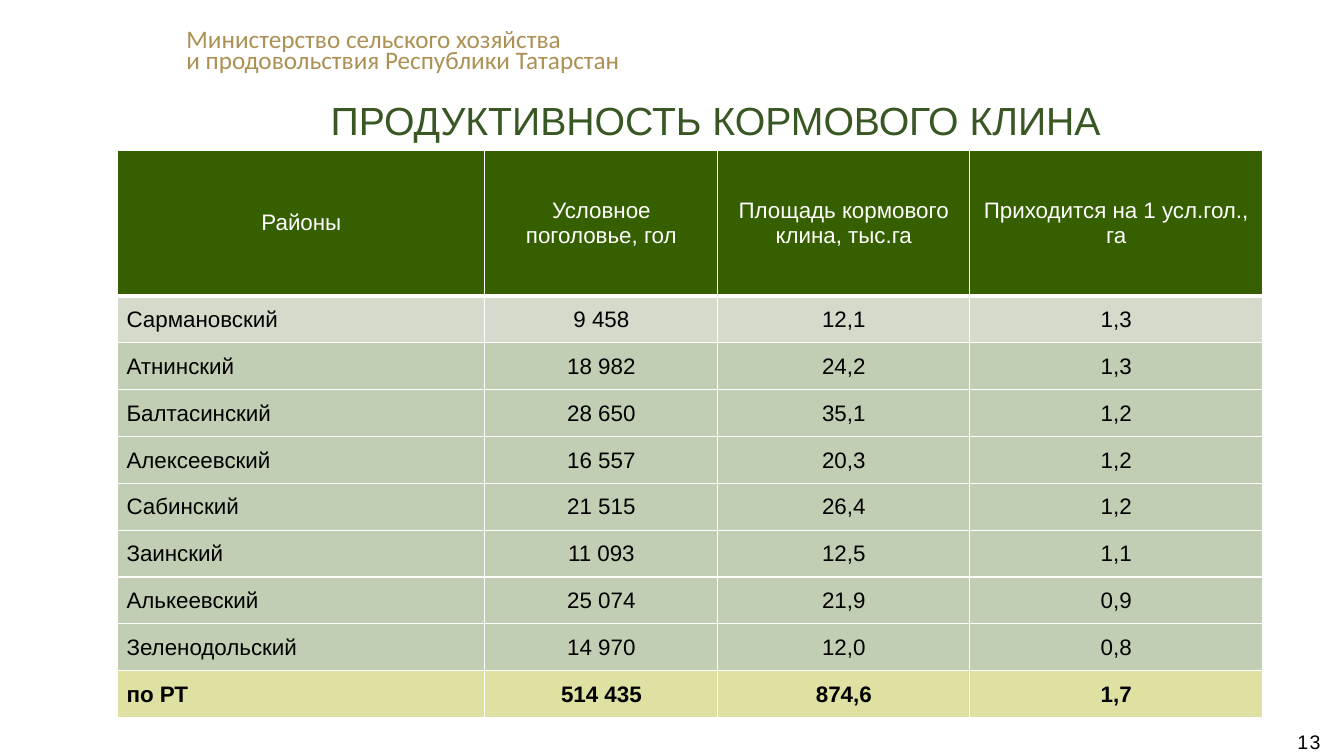
import pptx
import pptx.util
import pptx.dml.color
import pptx.enum.text
import pptx.oxml
import pptx.oxml.ns
from pptx.util import Cm

COLORS = {
    "white": "FFFFFF",
    "black": "000000",
    "gold": "AC9054",
    "title": "385723",
    "head": "366000",
    "pale": "D4DBCA",
    "green": "C2CEB3",
    "total": "DEE1A1",
}
ALIGN = pptx.enum.text.PP_ALIGN
ANCHOR = pptx.enum.text.MSO_ANCHOR

HEADS = ["Районы", "Условное поголовье, гол",
         "Площадь кормового клина, тыс.га", "Приходится на 1 усл.гол., га"]
ROWS = [
    ["Сармановский", "9 458", "12,1", "1,3"],
    ["Атнинский", "18 982", "24,2", "1,3"],
    ["Балтасинский", "28 650", "35,1", "1,2"],
    ["Алексеевский", "16 557", "20,3", "1,2"],
    ["Сабинский", "21 515", "26,4", "1,2"],
    ["Заинский", "11 093", "12,5", "1,1"],
    ["Алькеевский", "25 074", "21,9", "0,9"],
    ["Зеленодольский", "14 970", "12,0", "0,8"],
    ["по РТ", "514 435", "874,6", "1,7"],
]
WIDTHS = [9.25, 5.87, 6.35, 7.38]


def rgb(name):
    return pptx.dml.color.RGBColor.from_string(COLORS[name])


def write(frame, text, size=16, face="Arial", color="black", bold=False,
          align=ALIGN.CENTER, lead=None, track=None):
    """Fill a text frame, one paragraph per line; track is in points."""
    for i, line in enumerate(text.split("\n")):
        para = frame.add_paragraph() if i else frame.paragraphs[0]
        para.alignment = align
        if lead:
            para.line_spacing = lead
        run = para.add_run()
        run.text = line
        run.font.size = pptx.util.Pt(size)
        run.font.name = face
        run.font.bold = bold
        run.font.color.rgb = rgb(color)
        if track:
            run.font._element.set("spc", str(track * 100))


def add_text(slide, text, box, pad=None, **form):
    frame = slide.shapes.add_textbox(*map(Cm, box)).text_frame
    frame.word_wrap = False
    if pad is not None:
        set_pad(frame, pad, pad, pad, pad)
    write(frame, text, **form)


def set_pad(item, left, top, right, low):
    item.margin_left, item.margin_top = Cm(left), Cm(top)
    item.margin_right, item.margin_bottom = Cm(right), Cm(low)


def add_title(slide, text):
    title = slide.shapes.title
    title.left, title.top = Cm(2.31), Cm(2.31)
    title.width, title.height = Cm(31.45), Cm(1.45)
    frame = title.text_frame
    frame.auto_size = pptx.enum.text.MSO_AUTO_SIZE.NONE
    frame.vertical_anchor = ANCHOR.TOP
    write(frame, text, size=28, color="title")


def set_edges(cell, **sides):
    """Draw white cell borders, given as side=width in points."""
    props = cell._tc.get_or_add_tcPr()
    space = pptx.oxml.ns.nsdecls("a")
    for i, side in enumerate("LRTB"):
        width = pptx.util.Pt(sides.get(side, 1))
        props.insert(i, pptx.oxml.parse_xml(
            f'<a:ln{side} {space} w="{width}"><a:solidFill>'
            f'<a:srgbClr val="{COLORS["white"]}"/></a:solidFill></a:ln{side}>'))


def row_fill(row):
    return {0: "head", 1: "pale", len(ROWS): "total"}.get(row, "green")


def add_grid(slide):
    data = [HEADS] + ROWS
    frame = slide.shapes.add_table(len(data), len(HEADS), Cm(2.97), Cm(3.78),
                                   Cm(sum(WIDTHS)), Cm(14.3))
    table = frame.table
    table.horz_banding = False
    for col, width in zip(table.columns, WIDTHS):
        col.width = Cm(width)
    for r, values in enumerate(data):
        table.rows[r].height = Cm(1.18 if r else 3.68)
        for c, text in enumerate(values):
            cell = table.cell(r, c)
            cell.vertical_anchor = ANCHOR.MIDDLE
            cell.fill.solid()
            cell.fill.fore_color.rgb = rgb(row_fill(r))
            set_edges(cell, T=3 if r == 1 else 1, B=1 if r else 3)
            if r:
                set_pad(cell, 0.02 if c else 0.22, 0.02, 0.02, 0)
            write(cell.text_frame, text, color="black" if r else "white",
                  bold=r == len(ROWS),
                  align=ALIGN.LEFT if r and not c else ALIGN.CENTER)


def main():
    deck = pptx.Presentation()
    deck.slide_width, deck.slide_height = Cm(33.87), Cm(19.05)
    slide = deck.slides.add_slide(deck.slide_layouts[5])
    add_text(slide, "Министерство сельского хозяйства\n"
             "и продовольствия Республики Татарстан",
             (4.45, 0.66, 11.56, 1.37), size=18, face="Calibri",
             color="gold", align=ALIGN.LEFT, lead=0.7)
    add_title(slide, "ПРОДУКТИВНОСТЬ КОРМОВОГО КЛИНА")
    add_grid(slide)
    add_text(slide, "13", (32.66, 18.39, 0.66, 0.58), pad=0, size=14, track=1)
    deck.save("out.pptx")


if __name__ == "__main__":
    main()
